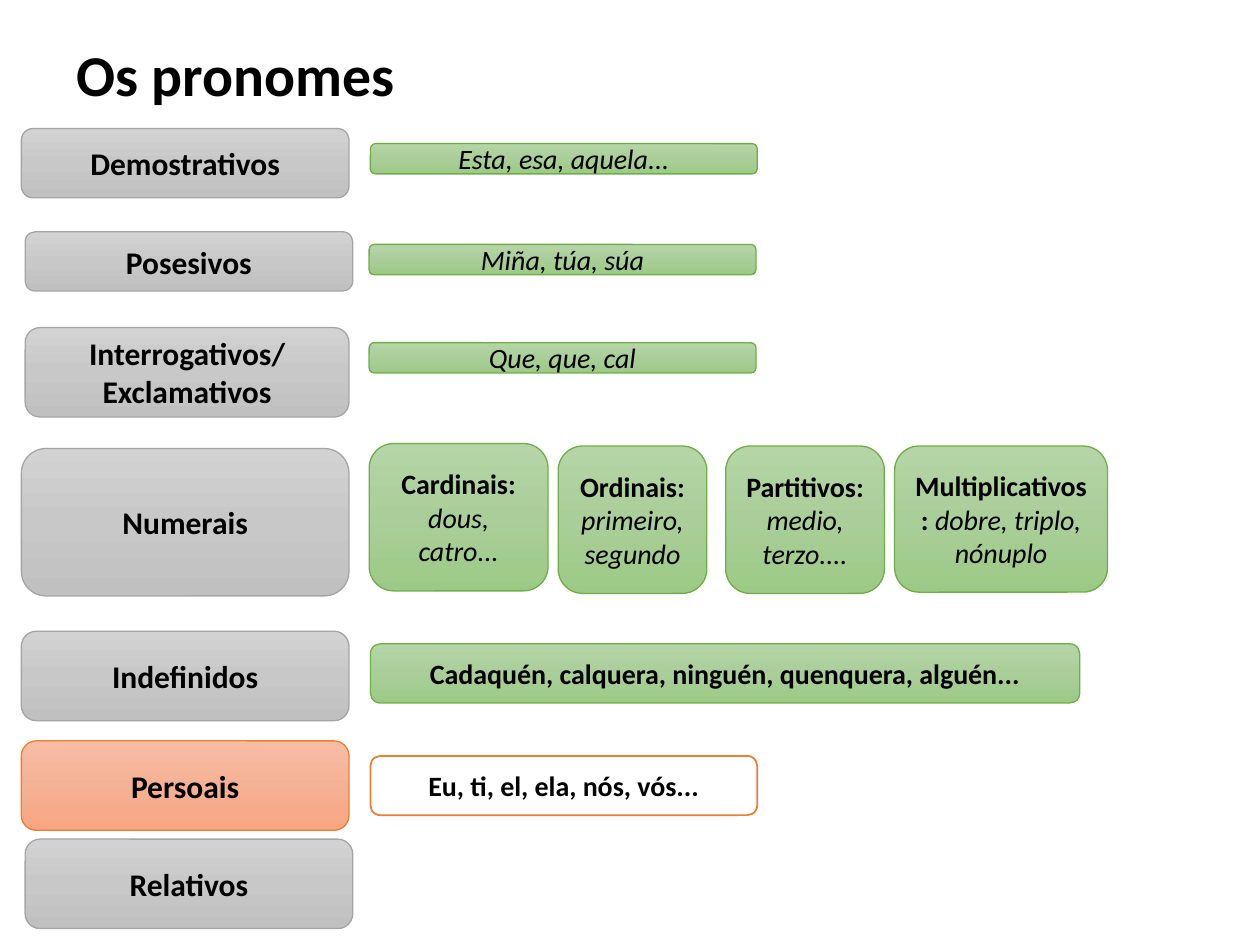
from copy import deepcopy

from pptx import Presentation
from pptx.dml.color import RGBColor
from pptx.enum.shapes import MSO_SHAPE
from pptx.enum.text import MSO_ANCHOR, MSO_AUTO_SIZE, PP_ALIGN
from pptx.oxml.ns import qn
from pptx.util import Inches, Pt

FONT = "Calibri"
COLORS = {"text": "000000", "white": "FFFFFF",
          "gray": "A5A5A5", "green": "70AD47", "orange": "ED7D31"}
GRADIENTS = {
    "gray": ("D2D2D2", "C8C8C8", "C0C0C0"),
    "green": ("B5D5A7", "AACE99", "9CCA86"),
    "orange": ("F7BDA4", "F5B195", "F8A581"),
}

# Pronoun classes: text, box, colour
CLASSES = [
    ("Demostrativos", (0.17, 1.02, 2.6, 0.55), "gray"),
    ("Posesivos", (0.2, 1.84, 2.6, 0.47), "gray"),
    ("Interrogativos/ Exclamativos", (0.2, 2.6, 2.57, 0.71), "gray"),
    ("Numerais", (0.17, 3.56, 2.6, 1.17), "gray"),
    ("Indefinidos", (0.17, 5.01, 2.6, 0.71), "gray"),
    ("Persoais", (0.17, 5.88, 2.6, 0.71), "orange"),
    ("Relativos", (0.2, 6.66, 2.6, 0.71), "gray"),
]

# Examples: bold text, italic text, box
EXAMPLES = [
    ("", "Esta, esa, aquela...", (2.94, 1.14, 3.07, 0.24)),
    ("", "Miña, túa, súa", (2.93, 1.94, 3.07, 0.24)),
    ("", "Que, que, cal", (2.93, 2.72, 3.07, 0.24)),
    ("Cardinais: ", "dous, catro...", (2.93, 3.52, 1.42, 1.17)),
    ("Ordinais: ", "primeiro, segundo", (4.43, 3.54, 1.18, 1.17)),
    ("Partitivos: ", "medio, terzo....", (5.76, 3.54, 1.26, 1.17)),
    ("Multiplicativos: ", "dobre, triplo, nónuplo", (7.1, 3.54, 1.69, 1.16)),
    ("Cadaquén, calquera, ninguén, quenquera, alguén...", "",
     (2.94, 5.11, 5.63, 0.47)),
]
PERSONAL = ("Eu, ti, el, ela, nós, vós...", "", (2.94, 6, 3.07, 0.47))


def rgb(value):
    return RGBColor.from_string(value)


def set_font(p, size):
    p.font.name = FONT
    p.font.size = Pt(size)
    p.font.color.rgb = rgb(COLORS["text"])


def fill_gradient(sp, colors):
    sp.fill.gradient()
    sp.fill.gradient_angle = 270  # top to bottom
    stops = next(sp._element.spPr.iter(qn("a:gsLst")))
    stops.insert(1, deepcopy(stops[0]))
    for stop, position, color in zip(sp.fill.gradient_stops, (0, 0.5, 1), colors):
        stop.position = position
        stop.color.rgb = rgb(color)


def add_box(s, box, color, size, bold="", italic="", plain=False):
    sp = s.shapes.add_shape(MSO_SHAPE.ROUNDED_RECTANGLE, *map(Inches, box))
    sp.shadow.inherit = False
    if plain:
        sp.fill.solid()
        sp.fill.fore_color.rgb = rgb(COLORS["white"])
    else:
        fill_gradient(sp, GRADIENTS[color])
    sp.line.color.rgb = rgb(COLORS[color])
    sp.line.width = Pt(1 if plain else 0.75)

    tf = sp.text_frame
    tf.word_wrap = True
    tf.vertical_anchor = MSO_ANCHOR.MIDDLE
    p = tf.paragraphs[0]
    p.alignment = PP_ALIGN.CENTER
    set_font(p, size)
    for text, is_bold in ((bold, True), (italic, False)):
        if text:
            r = p.add_run()
            r.text = text
            r.font.bold = is_bold
            r.font.italic = not is_bold


def add_title(s, box):
    title = s.shapes.title
    title.left, title.top, title.width, title.height = map(Inches, box)
    tf = title.text_frame
    tf.text = "Os pronomes"
    tf.word_wrap = True
    tf.auto_size = MSO_AUTO_SIZE.NONE
    tf.vertical_anchor = MSO_ANCHOR.MIDDLE
    p = tf.paragraphs[0]
    p.alignment = PP_ALIGN.LEFT
    p.line_spacing = 0.9
    set_font(p, 33)
    p.font.bold = True


def add_classes(s):
    for text, box, color in CLASSES:
        add_box(s, box, color, 18, bold=text)


def add_examples(s):
    for bold, italic, box in EXAMPLES:
        add_box(s, box, "green", 16, bold, italic)
    bold, italic, box = PERSONAL
    add_box(s, box, "orange", 16, bold, italic, plain=True)


def main():
    prs = Presentation()
    prs.slide_width, prs.slide_height = Inches(10), Inches(7.5)
    s = prs.slides.add_slide(prs.slide_layouts[5])  # title only
    add_title(s, (0.51, 0.13, 8.67, 0.98))
    add_classes(s)
    add_examples(s)
    prs.save("out.pptx")


if __name__ == "__main__":
    main()
